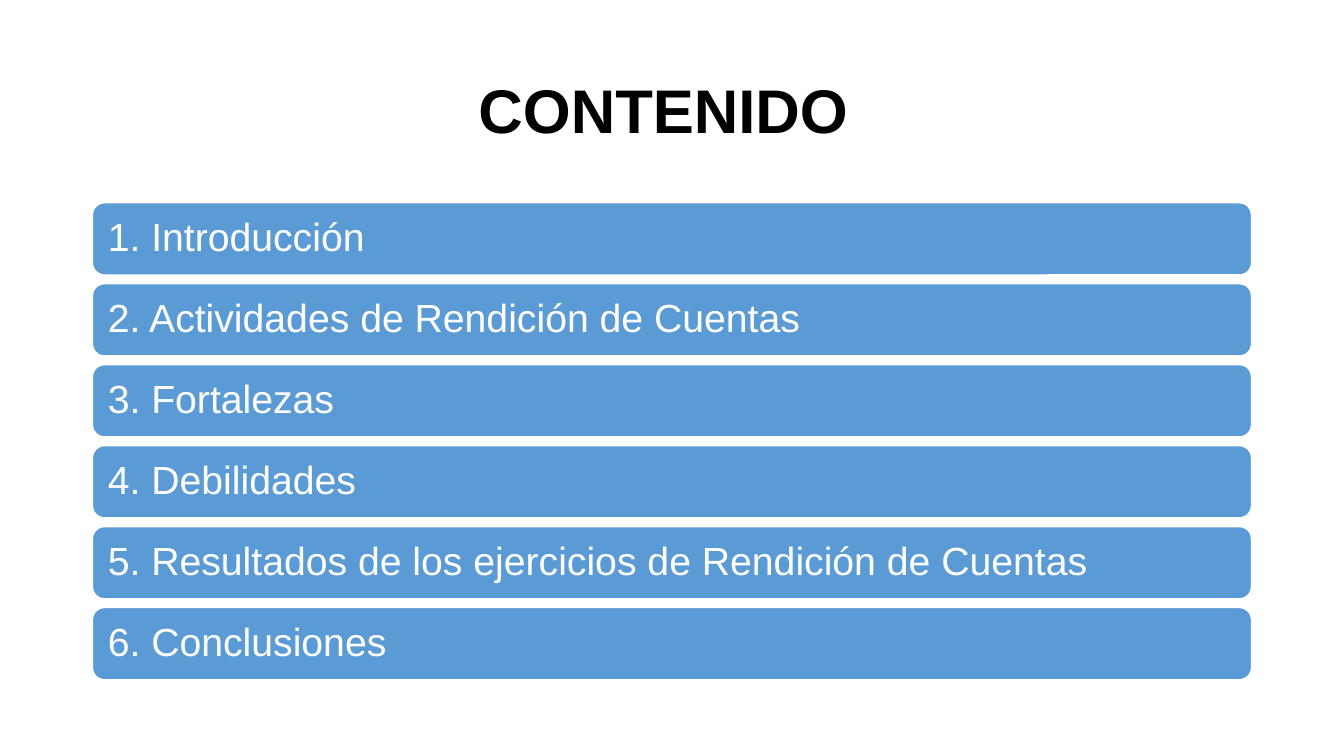
from dataclasses import dataclass

from pptx import Presentation
from pptx.dml.color import RGBColor
from pptx.enum.shapes import MSO_SHAPE
from pptx.enum.text import MSO_ANCHOR, PP_ALIGN
from pptx.util import Cm, Pt


@dataclass(frozen=True)
class Theme:
    font: str = "Arial"
    black: RGBColor = RGBColor(0x00, 0x00, 0x00)
    white: RGBColor = RGBColor(0xFF, 0xFF, 0xFF)
    blue: RGBColor = RGBColor(0x5B, 0x9B, 0xD5)
    title_size: Pt = Pt(44)
    section_size: Pt = Pt(28)


theme = Theme()


def write(paragraph, text, size, color, bold, alignment):
    paragraph.alignment = alignment
    paragraph.line_spacing = 0.9
    run = paragraph.add_run()
    run.text = text
    run.font.name = theme.font
    run.font.size = size
    run.font.bold = bold
    run.font.color.rgb = color


presentation = Presentation()
presentation.slide_width = Cm(33.87)
presentation.slide_height = Cm(19.05)
slide = presentation.slides.add_slide(presentation.slide_layouts[5])
slide.background.fill.solid()
slide.background.fill.fore_color.rgb = theme.white

left, width = Cm(2.33), Cm(29.21)

title = slide.shapes.title
title.left, title.top, title.width, title.height = left, Cm(1.01), width, Cm(3.68)
title.text_frame.vertical_anchor = MSO_ANCHOR.MIDDLE
write(title.text_frame.paragraphs[0], "CONTENIDO ", theme.title_size, theme.black, True, PP_ALIGN.CENTER)

sections = [
    "Introducción",
    "Actividades de Rendición de Cuentas",
    "Fortalezas",
    "Debilidades",
    "Resultados de los ejercicios de Rendición de Cuentas",
    "Conclusiones",
]
first_top, pitch, bar_height = Cm(5.11), Cm(2.04), Cm(1.82)

for index, section in enumerate(sections):
    bar = slide.shapes.add_shape(
        MSO_SHAPE.ROUNDED_RECTANGLE, left, first_top + index * pitch, width, bar_height
    )
    bar.shadow.inherit = False
    bar.fill.solid()
    bar.fill.fore_color.rgb = theme.blue
    bar.line.color.rgb = theme.white
    bar.line.width = Pt(1)
    frame = bar.text_frame
    frame.word_wrap = True
    frame.vertical_anchor = MSO_ANCHOR.MIDDLE
    frame.margin_left = frame.margin_right = Cm(0.3)
    frame.margin_top = frame.margin_bottom = Cm(0.3)
    write(frame.paragraphs[0], f"{index + 1}. {section}", theme.section_size, theme.white, False, PP_ALIGN.LEFT)

presentation.save("out.pptx")
